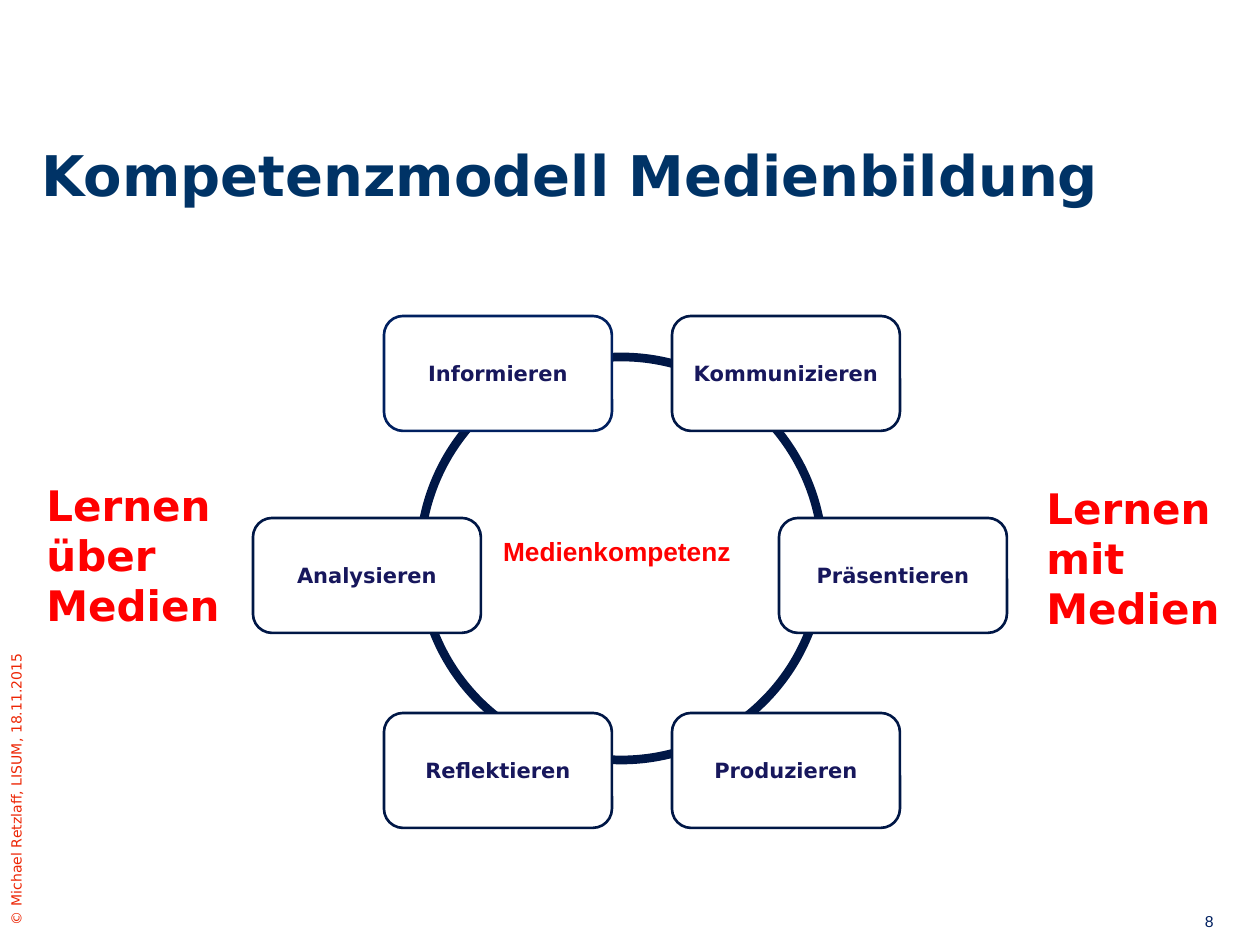
from dataclasses import dataclass

from lxml import etree
from pptx import Presentation
from pptx import util as u
from pptx.dml.color import RGBColor
from pptx.enum import shapes, text

PX = u.Inches(1) / 126


@dataclass(frozen=True)
class Theme:
    sans: str = "DejaVu Sans"
    arial: str = "Arial"
    title: str = "003366"
    label: str = "17175C"
    accent: str = "FF0000"
    copyright: str = "ED2403"
    line: str = "001746"
    line_first: str = "002060"
    white: str = "FFFFFF"
    title_size: int = 32
    side_size: int = 24
    center_size: int = 15
    label_size: int = 12
    number_size: int = 9
    copyright_size: int = 8


THEME = Theme()
LEFT, CENTER, RIGHT = text.PP_ALIGN.LEFT, text.PP_ALIGN.CENTER, text.PP_ALIGN.RIGHT
TOP, MIDDLE = text.MSO_ANCHOR.TOP, text.MSO_ANCHOR.MIDDLE


def px(n):
    return u.Emu(round(n * PX))


def rgb(value):
    return RGBColor.from_string(value)


def write(s, words, size, color, font=THEME.sans, bold=True, align=LEFT, anchor=TOP):
    tf = s.text_frame
    tf.word_wrap = True
    tf.vertical_anchor = anchor
    tf.text = words
    for p in tf.paragraphs:
        p.alignment = align
        for r in p.runs:
            r.font.name, r.font.size, r.font.bold = font, u.Pt(size), bold
            r.font.color.rgb = rgb(color)


def add_text(slide, box, words, size, color, **style):
    s = slide.shapes.add_textbox(*map(px, box))
    write(s, words, size, color, **style)
    return s


def add_outline(slide, kind, box, fill=None, line=None, width=1.5):
    s = slide.shapes.add_shape(kind, *map(px, box))
    s.shadow.inherit = False
    if fill:
        s.fill.solid()
        s.fill.fore_color.rgb = rgb(fill)
    else:
        s.fill.background()
    if line:
        s.line.color.rgb = rgb(line)
        s.line.width = u.Pt(width)
    else:
        s.line.fill.background()
    return s


def add_cycle(slide, x, y):
    """Ring of six competences around the central term."""
    rounded = shapes.MSO_SHAPE.ROUNDED_RECTANGLE
    s = add_outline(slide, rounded, (x + 218, y + 90, 292, 290))
    write(s, "Medienkompetenz", THEME.center_size, THEME.accent,
          font=THEME.arial, align=CENTER, anchor=MIDDLE)
    add_outline(slide, shapes.MSO_SHAPE.OVAL, (x + 167, y + 41, 403, 403),
                line=THEME.line, width=5)
    steps = [
        ("Informieren", 131, 0, THEME.line_first),
        ("Reflektieren", 131, 397, THEME.line),
        ("Kommunizieren", 419, 0, THEME.line),
        ("Präsentieren", 526, 202, THEME.line),
        ("Produzieren", 419, 397, THEME.line),
        ("Analysieren", 0, 202, THEME.line),
    ]
    for label, dx, dy, line in steps:
        s = add_outline(slide, rounded, (x + dx, y + dy, 228, 115), THEME.white, line)
        write(s, label, THEME.label_size, THEME.label, align=CENTER, anchor=MIDDLE)


def add_side_label(slide, box, words):
    add_text(slide, box, words, THEME.side_size, THEME.accent)


def add_copyright(slide, box):
    """Text turned to read upwards inside the given upright box."""
    x, y, w, h = box
    turned = (x + (w - h) / 2, y + (h - w) / 2, h, w)
    s = add_text(slide, turned, "© Michael Retzlaff, LISUM, 18.11.2015",
                 THEME.copyright_size, THEME.copyright,
                 bold=False, align=RIGHT, anchor=MIDDLE)
    s.rotation = 270


def add_slide_number(slide, box):
    s = add_text(slide, box, "", THEME.number_size, THEME.line_first)
    p = s.text_frame.paragraphs[0]
    p.alignment = RIGHT
    r = p.add_run()
    r.text = "8"
    r.font.name, r.font.size = THEME.arial, u.Pt(THEME.number_size)
    r.font.color.rgb = rgb(THEME.line_first)


def main():
    prs = Presentation()
    prs.slide_width, prs.slide_height = px(1260), px(945)
    slide = prs.slides.add_slide(prs.slide_layouts[6])
    add_text(slide, (29, 115, 1174, 118), "Kompetenzmodell Medienbildung",
             THEME.title_size, THEME.title, anchor=MIDDLE)
    add_copyright(slide, (0, 641, 32, 387))
    add_slide_number(slide, (1143, 906, 83, 39))
    add_cycle(slide, 253, 316)
    add_side_label(slide, (34, 473, 281, 165), "Lernen\nüber\nMedien")
    add_side_label(slide, (1034, 476, 226, 165), "Lernen\nmit\nMedien")
    prs.save("out.pptx")


if __name__ == "__main__":
    main()
